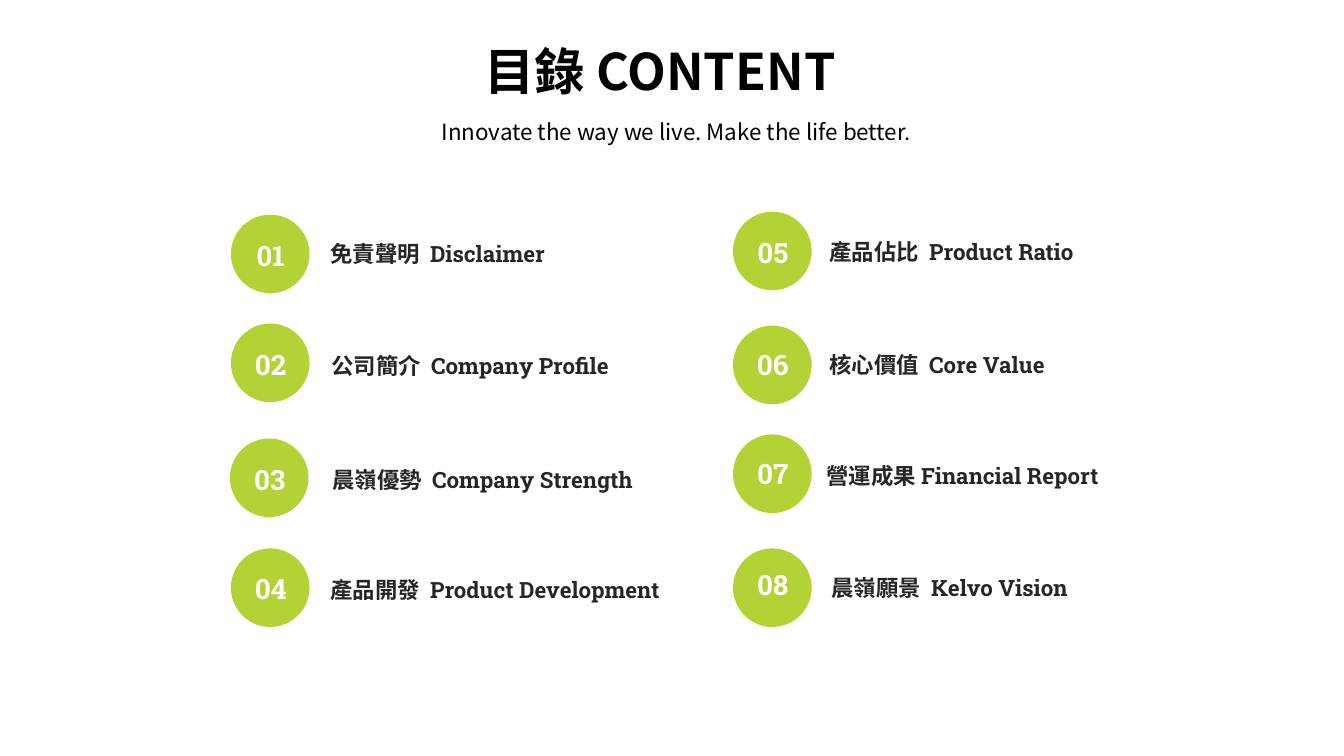
import pptx
import pptx.util
import pptx.dml.color
import pptx.enum.shapes
import pptx.enum.text

Inches = pptx.util.Inches
Pt = pptx.util.Pt
ALIGN = pptx.enum.text.PP_ALIGN
ANCHOR = pptx.enum.text.MSO_ANCHOR

COLOURS = {"black": "000000", "ink": "262626", "lime": "B2D235", "white": "FFFFFF"}
SANS, SLAB = "Noto Sans CJK SC", "Roboto Slab"
DISC = 0.78

# Number, wording, disc (left, top), number drop, label (left, top, width)
ENTRIES = [
    ("01", "免責聲明  Disclaimer", (2.29, 2.13), 0.19, (3.18, 2.15, 3.02)),
    ("02", "公司簡介  Company Profile", (2.29, 3.21), 0.19, (3.19, 3.26, 3.54)),
    ("03", "晨嶺優勢  Company Strength", (2.28, 4.35), 0.19, (3.2, 4.39, 4.28)),
    ("04", "產品開發  Product Development", (2.29, 5.44), 0.18, (3.18, 5.48, 4.28)),
    ("05", "產品佔比  Product Ratio", (7.27, 2.1), 0.19, (8.13, 2.13, 2.76)),
    ("06", "核心價值  Core Value", (7.27, 3.23), 0.17, (8.13, 3.25, 2.55)),
    ("07", "營運成果 Financial Report", (7.27, 4.31), 0.17, (8.1, 4.35, 4.63)),
    ("08", "晨嶺願景  Kelvo Vision", (7.27, 5.44), 0.14, (8.15, 5.46, 2.55)),
]


def add_text(slide, box, wording, size, font, colour, bold=True,
             align=ALIGN.CENTER, anchor=ANCHOR.TOP, line_spacing=None, before=0):
    text_box = slide.shapes.add_textbox(*map(Inches, box))
    frame = text_box.text_frame
    frame.word_wrap = True
    frame.vertical_anchor = anchor
    paragraph = frame.paragraphs[0]
    paragraph.text = wording
    paragraph.alignment = align
    paragraph.space_before = Pt(before)
    if line_spacing:
        paragraph.line_spacing = line_spacing
    paragraph.font.size = Pt(size)
    paragraph.font.name = font
    paragraph.font.bold = bold
    paragraph.font.color.rgb = pptx.dml.color.RGBColor.from_string(COLOURS[colour])


def add_heading(slide, left, top):
    add_text(slide, (left + 1.97, top, 7.23, 0.67), "目錄 CONTENT", 36, SANS, "black",
             anchor=ANCHOR.MIDDLE, line_spacing=0.9)
    add_text(slide, (left, top + 0.75, 11.5, 0.38),
             "Innovate the way we live. Make the life better.", 16, SANS, "black",
             bold=False, line_spacing=0.9, before=10)


def add_entry(slide, number, wording, disc_corner, number_drop, label_box):
    left, top = disc_corner
    # Numbered disc
    disc = slide.shapes.add_shape(pptx.enum.shapes.MSO_SHAPE.OVAL,
                                  *map(Inches, (left, top, DISC, DISC)))
    disc.shadow.inherit = False
    disc.fill.solid()
    disc.fill.fore_color.rgb = pptx.dml.color.RGBColor.from_string(COLOURS["lime"])
    disc.line.fill.background()
    add_text(slide, (left + 0.11, top + number_drop, 0.57, 0.44), number, 20, SLAB, "white")
    # Label
    add_text(slide, (*label_box, 0.73), wording, 16, SLAB, "ink", align=ALIGN.LEFT,
             anchor=ANCHOR.MIDDLE, line_spacing=Pt(20), before=10)


def main():
    deck = pptx.Presentation()
    deck.slide_width, deck.slide_height = Inches(13.33), Inches(7.5)
    contents = deck.slides.add_slide(deck.slide_layouts[6])
    add_heading(contents, 0.96, 0.4)
    for entry in ENTRIES:
        add_entry(contents, *entry)
    deck.save("out.pptx")


if __name__ == "__main__":
    main()
